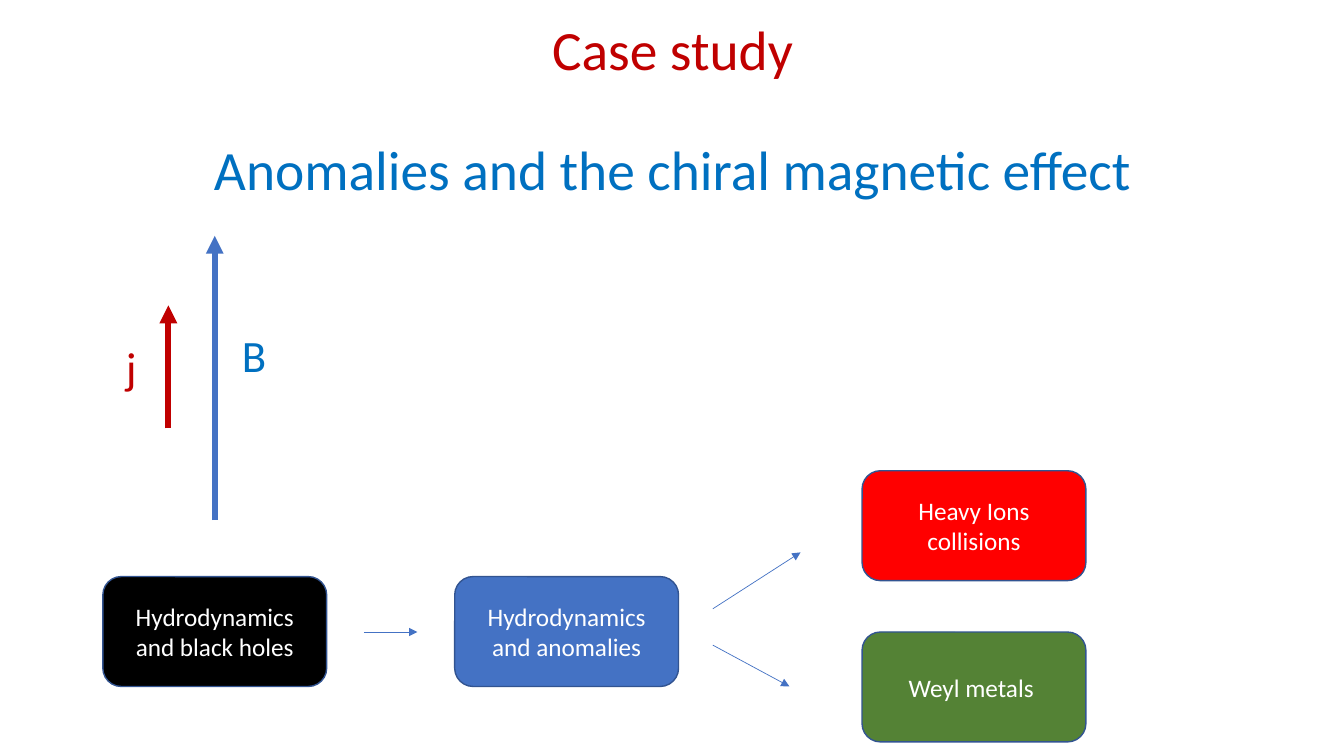
"""Build the case study slide on anomalies and the chiral magnetic effect."""
from lxml import etree
from pptx import Presentation
from pptx import util as u
from pptx.dml.color import RGBColor
from pptx.enum import shapes, text
from pptx.oxml import ns

PX = 9144
FONT = "Calibri"
BLACK = RGBColor(0x00, 0x00, 0x00)
WHITE = RGBColor(0xFF, 0xFF, 0xFF)
CRIMSON = RGBColor(0xC0, 0x00, 0x00)
RED = RGBColor(0xFF, 0x00, 0x00)
AZURE = RGBColor(0x00, 0x70, 0xC0)
BLUE = RGBColor(0x44, 0x72, 0xC4)
NAVY = RGBColor(0x32, 0x54, 0x91)
GREEN = RGBColor(0x54, 0x82, 0x35)
BOX = (222, 109)


class Deck:
    def __init__(self):
        self.prs = Presentation()
        self.prs.slide_width, self.prs.slide_height = self.emu(1333, 750)
        self.slide = self.prs.slides.add_slide(self.prs.slide_layouts[5])

    def emu(self, *px):
        return [u.Emu(n * PX) for n in px]

    def style(self, para, size, color, align):
        para.alignment = align
        for run in para.runs:
            run.font.name = FONT
            run.font.size = u.Pt(size)
            run.font.color.rgb = color

    def title(self, area, lines, size, gap):
        title = self.slide.shapes.title
        title.left, title.top, title.width, title.height = self.emu(*area)
        frame = title.text_frame
        frame.text = "\n".join(words for words, color in lines)
        frame.auto_size = text.MSO_AUTO_SIZE.NONE
        frame.vertical_anchor = text.MSO_ANCHOR.MIDDLE
        for para, (words, color) in zip(frame.paragraphs, lines):
            para.line_spacing = 0.9
            para.space_before = u.Pt(0)
            self.style(para, size, color, text.PP_ALIGN.CENTER)
        frame.paragraphs[-1].space_before = u.Pt(gap)

    def label(self, area, words, color):
        frame = self.slide.shapes.add_textbox(*self.emu(*area)).text_frame
        frame.word_wrap = True
        frame.auto_size = text.MSO_AUTO_SIZE.SHAPE_TO_FIT_TEXT
        frame.text = words
        self.style(frame.paragraphs[0], 32, color, text.PP_ALIGN.LEFT)

    def box(self, left, top, words, fill):
        box = self.slide.shapes.add_shape(
            shapes.MSO_SHAPE.ROUNDED_RECTANGLE, *self.emu(left, top, *BOX))
        box.shadow.inherit = False
        box.fill.solid()
        box.fill.fore_color.rgb = fill
        box.line.color.rgb = NAVY
        box.line.width = u.Pt(1)
        frame = box.text_frame
        frame.word_wrap = True
        frame.vertical_anchor = text.MSO_ANCHOR.MIDDLE
        frame.text = words
        self.style(frame.paragraphs[0], 18, WHITE, text.PP_ALIGN.CENTER)

    def arrow(self, ends, color, width):
        arrow = self.slide.shapes.add_connector(
            shapes.MSO_CONNECTOR.STRAIGHT, *self.emu(*ends))
        arrow.line.color.rgb = color
        arrow.line.width = u.Pt(width)
        props = arrow.element.spPr
        line = props.find(ns.qn("a:ln"))
        etree.SubElement(line, ns.qn("a:tailEnd"), type="triangle")
        etree.SubElement(props, ns.qn("a:effectLst"))


def main():
    deck = Deck()
    deck.title((92, 39, 1150, 145), [
        ("Case study", CRIMSON),
        ("Anomalies and the chiral magnetic effect", AZURE),
    ], 39.6, 43.5)

    deck.arrow((213, 516, 213, 234), BLUE, 4.25)
    deck.label((230, 320, 26, 64), "B", AZURE)
    deck.arrow((167, 425, 167, 303), CRIMSON, 4.25)
    deck.label((115, 332, 35, 64), "j", CRIMSON)

    for left, top, words, fill in [
        (102, 572, "Hydrodynamics and black holes", BLACK),
        (451, 572, "Hydrodynamics and anomalies", BLUE),
        (855, 467, "Heavy Ions collisions", RED),
        (855, 627, "Weyl metals ", GREEN),
    ]:
        deck.box(left, top, words, fill)

    for ends in [
        (361, 627, 414, 627),
        (707, 604, 794, 548),
        (707, 640, 783, 681),
    ]:
        deck.arrow(ends, BLUE, 0.5)

    deck.prs.save("out.pptx")


if __name__ == "__main__":
    main()
